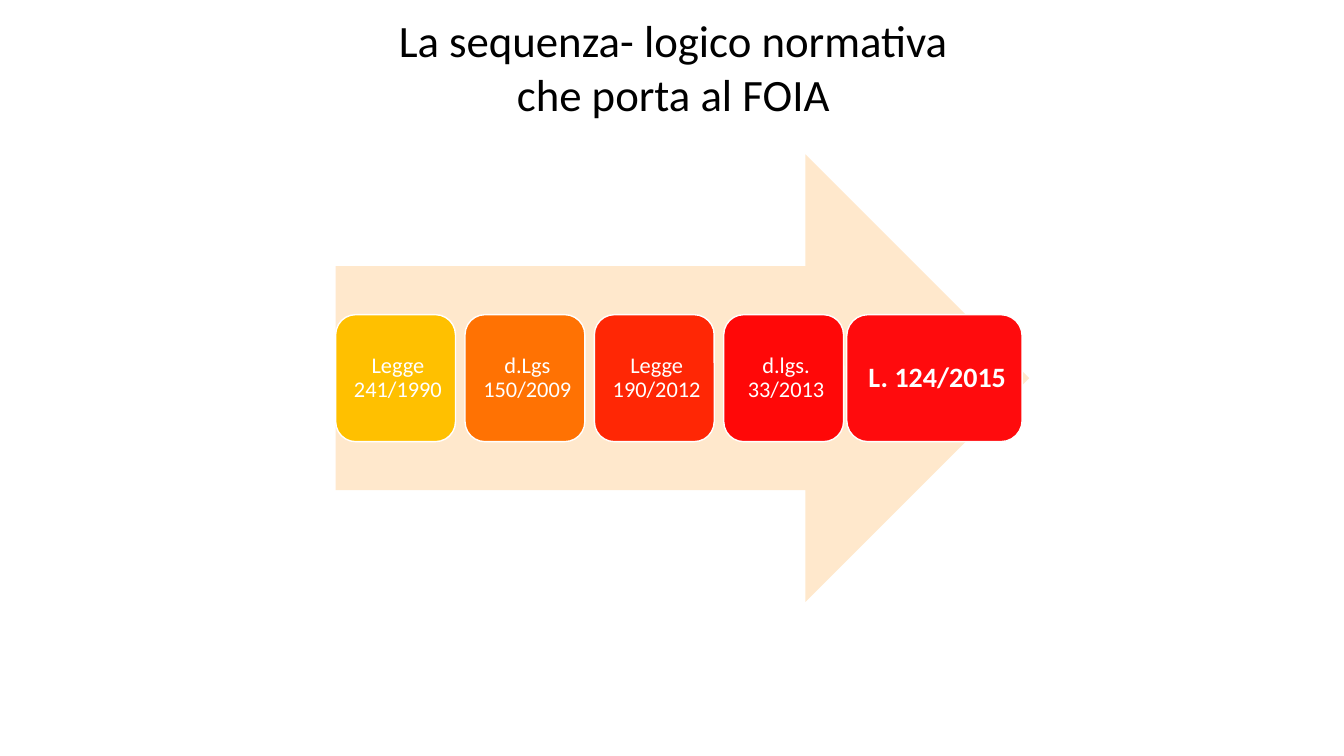
from dataclasses import dataclass

from pptx import Presentation
from pptx.dml.color import RGBColor
from pptx.enum.shapes import MSO_SHAPE
from pptx.enum.text import MSO_ANCHOR, PP_ALIGN
from pptx.util import Cm, Pt

RIGHT_ARROW = MSO_SHAPE.RIGHT_ARROW
ROUNDED = MSO_SHAPE.ROUNDED_RECTANGLE
MIDDLE = MSO_ANCHOR.MIDDLE
CENTER = PP_ALIGN.CENTER


@dataclass(frozen=True)
class Theme:
    font: str = "Calibri"
    ink: str = "000000"
    white: str = "FFFFFF"
    arrow: str = "FFE8CC"
    title_size: int = 32
    law_size: int = 16
    final_law_size: int = 20


@dataclass(frozen=True)
class Box:
    left: float
    top: float
    width: float
    height: float

    def lengths(self):
        return Cm(self.left), Cm(self.top), Cm(self.width), Cm(self.height)


THEME = Theme()
TITLE_LINES = ["La sequenza- logico normativa", "che porta al FOIA"]
LAWS = [
    ("Legge 241/1990", "FFC000"),
    ("d.Lgs 150/2009", "FF7203"),
    ("Legge 190/2012", "FF2705"),
    ("d.lgs. 33/2013", "FF0808"),
]
FINAL_LAW = ("L. 124/2015", "FF0B0D")


def add_text(paragraph, text, size, color, bold=False):
    paragraph.alignment = CENTER
    run = paragraph.add_run()
    run.text = text
    run.font.name = THEME.font
    run.font.size = Pt(size)
    run.font.bold = bold
    run.font.color.rgb = RGBColor.from_string(color)


def add_filled(slide, preset, box, color):
    figure = slide.shapes.add_shape(preset, *box.lengths())
    figure.shadow.inherit = False
    figure.fill.solid()
    figure.fill.fore_color.rgb = RGBColor.from_string(color)
    figure.line.fill.background()
    return figure


def place_title(slide, box):
    title = slide.shapes.title
    title.left, title.top, title.width, title.height = box.lengths()
    frame = title.text_frame
    frame.vertical_anchor = MIDDLE
    for index, line in enumerate(TITLE_LINES):
        paragraph = frame.add_paragraph() if index else frame.paragraphs[0]
        paragraph.space_before = Pt(0)
        add_text(paragraph, line, THEME.title_size, THEME.ink)


def add_law(slide, box, law, size, inset, bold=False):
    name, color = law
    card = add_filled(slide, ROUNDED, box, color)
    card.adjustments[0] = 0.167
    card.line.color.rgb = RGBColor.from_string(THEME.white)
    card.line.width = Pt(1)
    frame = card.text_frame
    frame.word_wrap = True
    frame.vertical_anchor = MIDDLE
    frame.margin_left = frame.margin_top = frame.margin_bottom = Cm(inset)
    frame.margin_right = Cm(inset * 0.6)
    paragraph = frame.paragraphs[0]
    paragraph.line_spacing = 0.9
    add_text(paragraph, name, size, THEME.white, bold)


def draw_sequence(slide, box):
    add_filled(slide, RIGHT_ARROW, box, THEME.arrow)
    card_width, card_height, pitch = 3.02, 3.2, 3.26
    final_width, final_gap = 4.42, 0.08
    top = box.top + (box.height - card_height) / 2
    for index, law in enumerate(LAWS):
        card_box = Box(box.left + index * pitch, top, card_width, card_height)
        add_law(slide, card_box, law, THEME.law_size, 0.3)
    final_left = card_box.left + card_width + final_gap
    final_box = Box(final_left, top, final_width, card_height)
    add_law(slide, final_box, FINAL_LAW, THEME.final_law_size, 0.35, bold=True)


def main():
    deck = Presentation()
    deck.slide_width, deck.slide_height = Cm(33.87), Cm(19.05)
    slide = deck.slides.add_slide(deck.slide_layouts[5])
    place_title(slide, Box(5.54, 0.08, 22.86, 3.18))
    draw_sequence(slide, Box(8.46, 3.89, 17.48, 11.28))
    deck.save("out.pptx")


if __name__ == "__main__":
    main()
